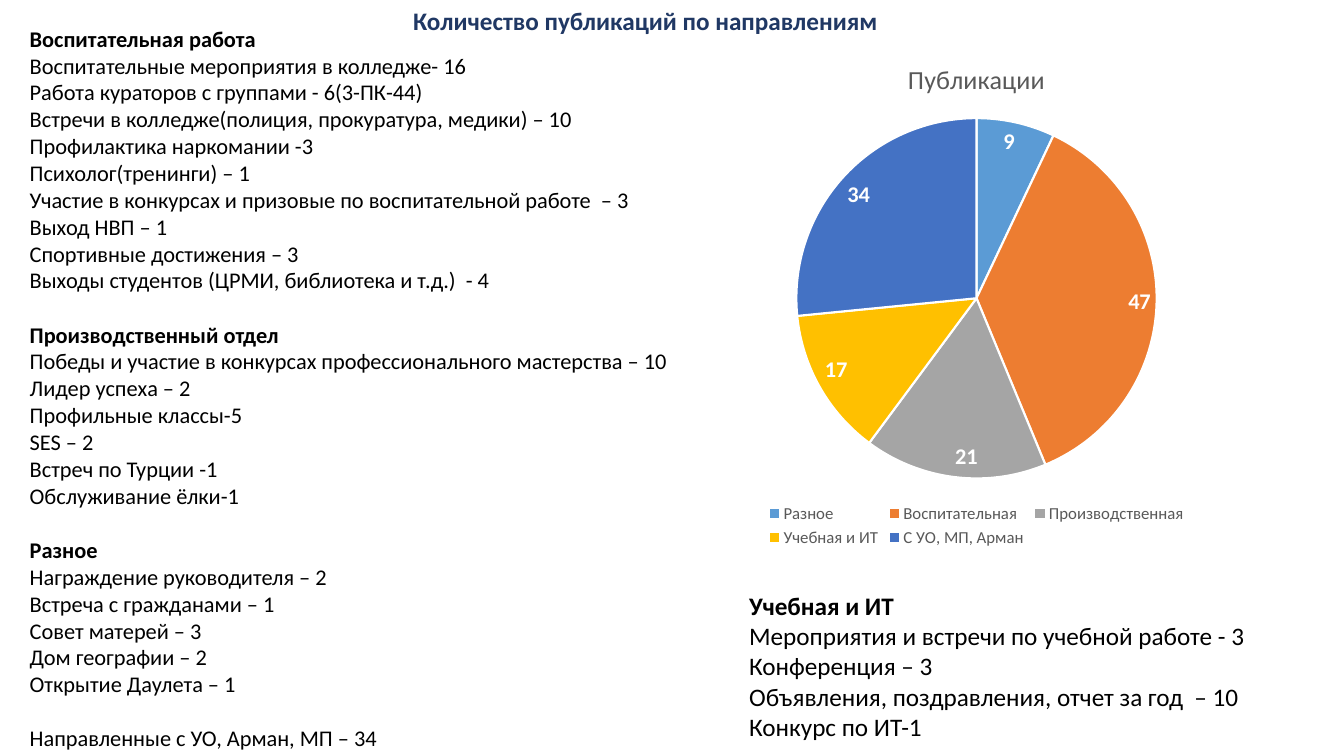
from pptx import Presentation
from pptx.chart.data import CategoryChartData
from pptx.dml.color import RGBColor
from pptx.enum.chart import XL_CHART_TYPE as ChartType, XL_LABEL_POSITION as LabelPos, XL_LEGEND_POSITION as LegendPos
from pptx.util import Cm, Pt

FONT = "Calibri"
COLORS = {"text": "000000", "heading": "203864", "muted": "595959", "white": "FFFFFF"}

HEADING = "Количество публикаций по направлениям"
DEPARTMENTS = [
    ("Воспитательная работа", [
        "Воспитательные мероприятия в колледже- 16",
        "Работа кураторов с группами - 6(3-ПК-44)",
        "Встречи в колледже(полиция, прокуратура, медики) – 10",
        "Профилактика наркомании -3",
        "Психолог(тренинги) – 1",
        "Участие в конкурсах и призовые по воспитательной работе  – 3",
        "Выход НВП – 1",
        "Спортивные достижения – 3",
        "Выходы студентов (ЦРМИ, библиотека и т.д.)  - 4",
    ]),
    ("Производственный отдел", [
        "Победы и участие в конкурсах профессионального мастерства – 10",
        "Лидер успеха – 2",
        "Профильные классы-5",
        "SES – 2",
        "Встреч по Турции -1",
        "Обслуживание ёлки-1",
    ]),
    ("Разное", [
        "Награждение руководителя – 2",
        "Встреча с гражданами – 1",
        "Совет матерей – 3",
        "Дом географии – 2",
        "Открытие Даулета – 1",
    ]),
    (None, ["Направленные с УО, Арман, МП – 34"]),
]
STUDIES = [
    ("Учебная и ИТ", [
        "Мероприятия и встречи по учебной работе - 3",
        "Конференция – 3",
        "Объявления, поздравления, отчет за год  – 10",
        "Конкурс по ИТ-1",
    ]),
]
CHART_TITLE = "Публикации"
PUBLICATIONS = [
    ("Разное", 9, "5B9BD5"),
    ("Воспитательная", 47, "ED7D31"),
    ("Производственная", 21, "A5A5A5"),
    ("Учебная и ИТ", 17, "FFC000"),
    ("С УО, МП, Арман", 34, "4472C4"),
]


def style(font, size, color, bold=False):
    font.name = FONT
    font.size = Pt(size)
    font.bold = bold
    font.color.rgb = RGBColor.from_string(color)


def add_sections(slide, place, sections, size, color):
    frame = slide.shapes.add_textbox(*map(Cm, place)).text_frame
    frame.word_wrap = True
    paragraph = frame.paragraphs[0]
    for number, (title, items) in enumerate(sections):
        lines = ([(title, True)] if title else []) + [(item, False) for item in items]
        for position, (line, bold) in enumerate(lines):
            if number or position:
                paragraph = frame.add_paragraph()
            if number and not position:
                paragraph.space_before = Pt(round(size * 1.22, 1))
            run = paragraph.add_run()
            run.text = line
            style(run.font, size, color, bold)


def add_publications(slide, place):
    names, counts, fills = zip(*PUBLICATIONS)
    data = CategoryChartData()
    data.categories = names
    data.add_series(CHART_TITLE, counts)
    chart = slide.shapes.add_chart(ChartType.PIE, *map(Cm, place), data).chart
    style(chart.font, 10, COLORS["text"])

    chart.has_title = True
    title = chart.chart_title.text_frame.paragraphs[0].add_run()
    title.text = CHART_TITLE
    style(title.font, 18.6, COLORS["muted"])

    chart.has_legend = True
    chart.legend.position = LegendPos.BOTTOM
    chart.legend.include_in_layout = False
    style(chart.legend.font, 12, COLORS["muted"])

    pie = chart.plots[0]
    pie.vary_by_categories = True
    series = pie.series[0]
    for index, fill in enumerate(fills):
        sector = series.points[index].format
        sector.fill.solid()
        sector.fill.fore_color.rgb = RGBColor.from_string(fill)
        sector.line.color.rgb = RGBColor.from_string(COLORS["white"])
        sector.line.width = Pt(1.5)

    labels = series.data_labels
    labels.show_value = True
    labels.show_percentage = False
    labels.position = LabelPos.INSIDE_END
    style(labels.font, 16, COLORS["white"], True)


def main():
    deck = Presentation()
    deck.slide_width, deck.slide_height = Cm(33.87), Cm(19.05)
    slide = deck.slides.add_slide(deck.slide_layouts[6])
    add_sections(slide, (0.5, 0.5, 32.6, 19.4), DEPARTMENTS, 16, COLORS["text"])
    add_sections(slide, (10.16, 0, 16.93, 1.03), [(HEADING, [])], 18, COLORS["heading"])
    add_sections(slide, (18.63, 14.75, 16.93, 4.12), STUDIES, 18, COLORS["text"])
    add_publications(slide, (15.77, 1.02, 17.68, 12.88))
    deck.save("out.pptx")


if __name__ == "__main__":
    main()
